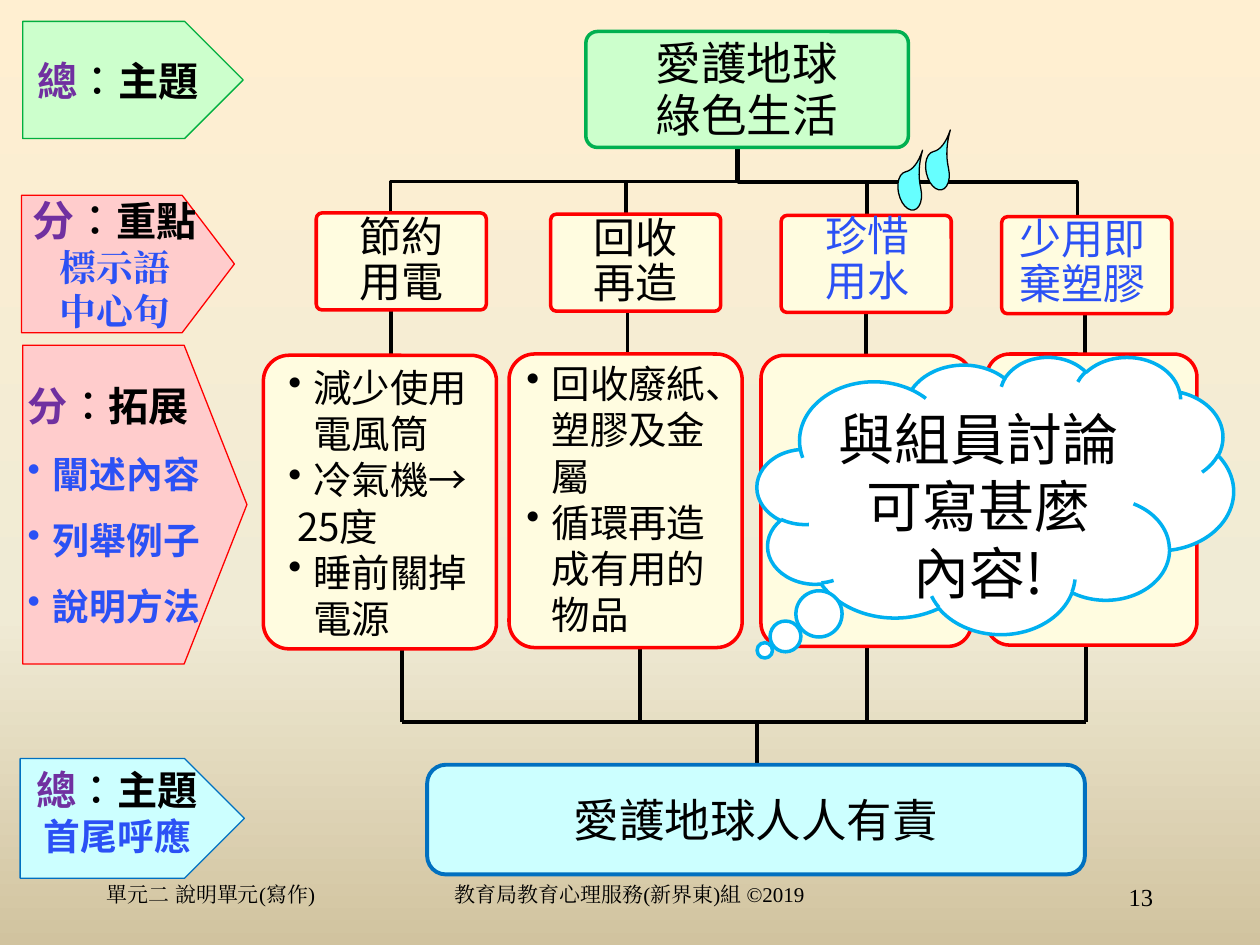
import copy
from dataclasses import dataclass

import lxml.etree
import pptx
import pptx.dml.color
import pptx.enum.shapes
import pptx.enum.text
import pptx.oxml.ns
import pptx.util

Inches = pptx.util.Inches
Pt = pptx.util.Pt
SHAPE = pptx.enum.shapes.MSO_SHAPE
ALIGN = pptx.enum.text.PP_ALIGN
ANCHOR = pptx.enum.text.MSO_ANCHOR
qn = pptx.oxml.ns.qn

SANS, SERIF = "Noto Sans CJK SC", "Times New Roman"
BLACK, PURPLE, BLUE = "000000", "7030A0", "2B51F5"
RED, CREAM, PINK, CYAN, MINT = "FF0000", "FFFCE0", "FFCCCC", "CCFFFF", "CCFFCC"
DEFAULT_INSETS = (0.1, 0.05, 0.1, 0.05)


@dataclass
class Span:
    text: str
    size: float
    color: str = BLACK
    bold: bool = False
    font: str = SANS


@dataclass
class Para:
    spans: list
    align: object = ALIGN.CENTER
    spacing: object = None
    bullet: bool = False
    indent: float = 0


def rgb(hex_color):
    return pptx.dml.color.RGBColor.from_string(hex_color)


def add_span(para, span):
    """Add one run per line of the span, with line breaks between them."""
    for number, line in enumerate(span.text.split("\n")):
        if number:
            para.add_line_break()
        run = para.add_run()
        run.text = line
        run.font.size, run.font.bold = Pt(span.size), span.bold
        run.font.name = span.font
        run.font.color.rgb = rgb(span.color)
        east_asian = lxml.etree.SubElement(run.font._element, qn("a:ea"))
        east_asian.set("typeface", span.font)


def write(shape, paras, anchor=ANCHOR.MIDDLE, insets=DEFAULT_INSETS):
    frame = shape.text_frame
    frame.word_wrap, frame.vertical_anchor = True, anchor
    frame.margin_left, frame.margin_top, frame.margin_right, frame.margin_bottom = map(Inches, insets)
    for number, item in enumerate(paras):
        para = frame.add_paragraph() if number else frame.paragraphs[0]
        para.alignment = item.align
        if item.spacing:
            para.line_spacing = item.spacing
        properties = para._p.get_or_add_pPr()
        properties.set("marL", str(Inches(item.indent)))
        properties.set("indent", str(Inches(-0.2 if item.bullet else 0)))
        if item.bullet:
            lxml.etree.SubElement(properties, qn("a:buChar")).set("char", "•")
        for span in item.spans:
            add_span(para, span)


def add_shape(parent, kind, box, fill, line, width, adjustments=()):
    shape = parent.shapes.add_shape(kind, *map(Inches, box))
    shape.shadow.inherit = False
    shape.fill.solid()
    shape.fill.fore_color.rgb = rgb(fill)
    shape.line.color.rgb, shape.line.width = rgb(line), Pt(width)
    for number, value in enumerate(adjustments):
        shape.adjustments[number] = value
    return shape


def add_text(page, box, paras):
    write(page.shapes.add_textbox(*map(Inches, box)), paras, ANCHOR.TOP)


def add_line(page, x1, y1, x2, y2, width=2):
    line = page.shapes.add_connector(
        pptx.enum.shapes.MSO_CONNECTOR.STRAIGHT, *map(Inches, (x1, y1, x2, y2)))
    line.line.color.rgb, line.line.width = rgb(BLACK), Pt(width)
    lxml.etree.SubElement(line._element.spPr, qn("a:effectLst"))


def add_elbow(page, x1, y1, x2, y2):
    """Draw a branch that goes down, across at half height, and down again."""
    middle = (y1 + y2) / 2
    builder = page.shapes.build_freeform(Inches(x1), Inches(y1))
    corners = [(x1, middle), (x2, middle), (x2, y2)]
    builder.add_line_segments([(Inches(x), Inches(y)) for x, y in corners], close=False)
    branch = builder.convert_to_shape()
    branch.shadow.inherit = False
    branch.fill.background()
    branch.line.color.rgb, branch.line.width = rgb(BLACK), Pt(2)


def paint_background(page):
    fill = page.background.fill
    fill.gradient()
    fill.gradient_angle = 270
    stop_list = page._element.xpath(".//a:gsLst")[0]
    stop_list.append(copy.deepcopy(stop_list[-1]))
    for stop, (position, color) in zip(
            fill.gradient_stops, [(0, "FFEFD1"), (0.65, "F0EBD5"), (1, "D1C39F")]):
        stop.position, stop.color.rgb = position, rgb(color)


def add_branches(page):
    add_elbow(page, 5.85, 1.17, 3.1, 1.71)
    add_elbow(page, 5.86, 1.18, 8.55, 1.71)
    for x in (4.97, 6.88):
        add_line(page, x, 1.44, x, 1.71)
    for x, top, bottom in [(3.1, 2.33, 2.99), (4.98, 2.43, 2.82), (6.87, 2.33, 3.04),
                           (8.61, 2.33, 3.04), (6.01, 5.72, 6.29)]:
        add_line(page, x, top, x, bottom, 2.25)
    for x in (3.19, 5.08, 6.88, 8.62):
        add_line(page, x, 5.1, x, 5.73)
    add_line(page, 3.19, 5.73, 8.62, 5.73)


def add_topic(page, box):
    topic = add_shape(page, SHAPE.ROUNDED_RECTANGLE, box, MINT, "00B050", 2, [0.1])
    write(topic, [Para([Span(line, 26)], spacing=Pt(30)) for line in ("愛護地球", "綠色生活")],
          insets=[0.14] * 4)


def add_heading(page, box, text, text_box=None):
    """Draw a heading; with a text_box its blue words sit in a box of their own."""
    heading = add_shape(page, SHAPE.ROUNDED_RECTANGLE, box, CREAM, RED, 2, [0.06])
    if text_box:
        add_text(page, text_box, [Para([Span(text, 24, BLUE)], spacing=0.9)])
    else:
        write(heading, [Para([Span(text, 24)], spacing=0.9)], insets=[0.14] * 4)


def add_detail(page, box, text_box=None, points=()):
    add_shape(page, SHAPE.ROUNDED_RECTANGLE, box, CREAM, RED, 2, [0.11])
    if text_box:
        add_text(page, text_box, [
            Para([Span(text, 22)], ALIGN.LEFT, bullet=bullet, indent=0.38 if bullet else 0.25)
            for text, bullet in points])


def add_drops(page, boxes):
    group = page.shapes.add_group_shape()
    for box in boxes:
        drop = add_shape(group, SHAPE.TEAR, box, "66FFFF", BLACK, 0.75, [1.894])
        drop.rotation = 347.4


def add_label(page, box, point, fill, line, paras, insets=DEFAULT_INSETS):
    label = add_shape(page, SHAPE.PENTAGON, box, fill, line, 0.75, [point])
    write(label, paras, insets=insets)


def add_labels(page):
    def title(first, rest, align=ALIGN.CENTER):
        return Para([Span(first, 23, PURPLE, True), Span(rest, 23, BLACK, True)], align)

    narrow = (0.04, 0.05, 0.04, 0.05)
    add_label(page, (0.18, 0.17, 1.75, 0.93), 0.5, MINT, "01AF3F", [title("總", "︰主題")])
    key_point = Para([Span("分", 24, PURPLE, True), Span("︰", 24, BLACK, True),
                      Span("重點", 23, BLACK, True)])
    hints = [Para([Span(text, 21, BLUE, True, SERIF)]) for text in ("標示語", "中心句")]
    add_label(page, (0.17, 1.55, 1.69, 1.09), 0.38, PINK, RED, [key_point, *hints], narrow)
    methods = [Para([Span(text, 21, BLUE, True)], ALIGN.LEFT, 1.5, True, 0.2)
               for text in ("闡述內容", "列舉例子", "說明方法")]
    add_label(page, (0.18, 2.74, 1.78, 2.53), 0.28, PINK, RED,
              [title("分", "︰拓展", ALIGN.LEFT), *methods], narrow)
    add_label(page, (0.16, 6.02, 1.78, 0.95), 0.5, CYAN, "0070C0",
              [title("總", "︰主題"), Para([Span("首尾呼應", 21, BLUE, True)])],
              (0.1, 0.05, 0.1, 0.16))


def add_conclusion(page, box):
    conclusion = add_shape(page, SHAPE.ROUNDED_RECTANGLE, box, CYAN, "0070C0", 2.25, [0.17])
    write(conclusion, [Para([Span("愛護地球人人有責", 26)])])


def add_cloud(page, box):
    cloud = add_shape(page, SHAPE.CLOUD_CALLOUT, box, "FFFFFF", "00B0F0", 2, [-0.484, 0.56])
    write(cloud, [Para([Span("與組員討論\n可寫甚麼\n內容!", 32)])], ANCHOR.TOP)


def add_footer(page, top, height):
    for left, width, text, size, align in [
            (0.75, 2.08, "單元二 說明單元(寫作)", 12, ALIGN.LEFT),
            (2.95, 4.09, "教育局教育心理服務(新界東)組 ©2019", 12, ALIGN.CENTER),
            (7.17, 2.08, "13", 14, ALIGN.RIGHT)]:
        add_text(page, (left, top, width, height), [Para([Span(text, size, font=SERIF)], align)])


def main():
    deck = pptx.Presentation()
    deck.slide_width, deck.slide_height = Inches(10), Inches(7.5)
    page = deck.slides.add_slide(deck.slide_layouts[6])
    paint_background(page)
    add_branches(page)
    add_topic(page, (4.65, 0.25, 2.56, 0.92))
    add_heading(page, (2.51, 1.69, 1.35, 0.77), "節約 用電")
    add_heading(page, (4.37, 1.7, 1.35, 0.77), "回收 再造")
    add_heading(page, (6.2, 1.71, 1.35, 0.77), "珍惜 用水", (6.39, 1.66, 0.99, 0.83))
    add_heading(page, (7.95, 1.72, 1.35, 0.77), "少用即棄塑膠", (7.92, 1.68, 1.34, 0.83))
    add_detail(page, (2.09, 2.82, 1.85, 2.33), (2.01, 2.84, 1.87, 2.43), [
        ("減少使用 電風筒", True), ("冷氣機→", True), ("25度", False), ("睡前關掉 電源", True)])
    add_detail(page, (4.04, 2.81, 1.85, 2.33), (3.9, 2.81, 1.85, 2.33), [
        ("回收廢紙、塑膠及金屬", True), ("循環再造成有用的物品", True)])
    add_detail(page, (6.04, 2.82, 1.67, 2.31))
    add_detail(page, (7.83, 2.81, 1.67, 2.31))
    add_drops(page, [(7.35, 1.2, 0.18, 0.31), (7.13, 1.36, 0.18, 0.31)])
    add_labels(page)
    add_conclusion(page, (3.39, 6.07, 5.22, 0.87))
    add_footer(page, 6.95, 0.5)
    add_cloud(page, (6.01, 2.83, 3.78, 2.2))
    deck.save("out.pptx")


if __name__ == "__main__":
    main()
